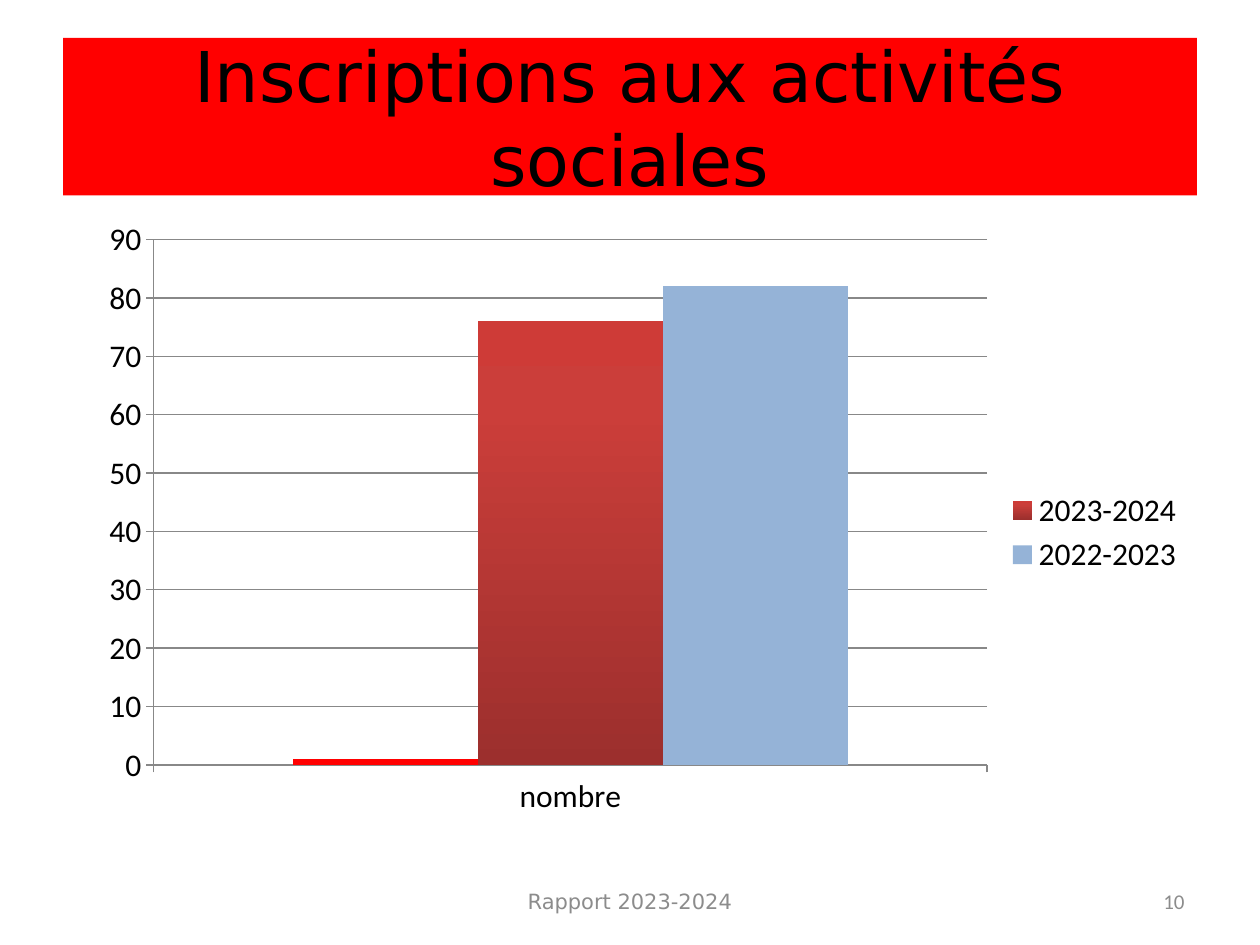
from lxml.etree import SubElement
from pptx import Presentation
from pptx.chart.data import CategoryChartData
from pptx.dml.color import RGBColor
from pptx.enum.chart import XL_CHART_TYPE, XL_LEGEND_POSITION, XL_TICK_MARK
from pptx.enum.text import MSO_ANCHOR, MSO_AUTO_SIZE, PP_ALIGN
from pptx.oxml import parse_xml
from pptx.oxml.ns import nsdecls, qn
from pptx.util import Pt

RED = RGBColor(0xFF, 0x00, 0x00)
BLUE = RGBColor(0x95, 0xB3, 0xD7)
BLACK = RGBColor(0x00, 0x00, 0x00)
GREY = RGBColor(0x88, 0x88, 0x88)
FOOTER_GREY = RGBColor(0x8C, 0x8C, 0x8C)
BRICK_STOPS = [
    (0, RGBColor(0x9C, 0x2F, 0x2D)),
    (80, RGBColor(0xCB, 0x3E, 0x3A)),
    (100, RGBColor(0xCE, 0x3B, 0x37)),
]
SERIES = [
    ("Series 1", 1, RED),
    ("2023-2024", 76, BRICK_STOPS),
    ("2022-2023", 82, BLUE),
]


class SlideBuilder:
    """Holds the style and the current slide; lengths are in points."""

    body_font = "Calibri"
    title_font = "DejaVu Sans"

    def __init__(self, prs):
        self.s = prs.slides.add_slide(prs.slide_layouts[5])

    def style_font(self, font, name, size, color):
        font.name, font.size, font.color.rgb = name, Pt(size), color

    def fill_text(self, sp, text, font_name, size, color, align):
        tf = sp.text_frame
        tf.text = text
        tf.word_wrap = True
        tf.auto_size = MSO_AUTO_SIZE.NONE
        tf.vertical_anchor = MSO_ANCHOR.MIDDLE
        p = tf.paragraphs[0]
        p.alignment = align
        self.style_font(p.font, font_name, size, color)

    def title(self, text, x, y, w, h):
        sp = self.s.shapes.title
        sp.left, sp.top, sp.width, sp.height = Pt(x), Pt(y), Pt(w), Pt(h)
        sp.fill.solid()
        sp.fill.fore_color.rgb = RED
        self.fill_text(sp, text, self.title_font, 40, BLACK, PP_ALIGN.CENTER)

    def footer(self, text, x, w, font_name, align):
        sp = self.s.shapes.add_textbox(Pt(x), Pt(500.4), Pt(w), Pt(28.8))
        self.fill_text(sp, text, font_name, 12, FOOTER_GREY, align)

    def column_chart(self, category, series, x, y, w, h):
        data = CategoryChartData()
        data.categories = [category]
        for name, value, _ in series:
            data.add_series(name, [value])
        chart = self.s.shapes.add_chart(
            XL_CHART_TYPE.COLUMN_CLUSTERED, Pt(x), Pt(y), Pt(w), Pt(h), data
        ).chart
        chart.has_title = False
        self.style_font(chart.font, self.body_font, 18, BLACK)

        plot = chart.plots[0]
        plot.gap_width, plot.overlap = 150, 0
        plot.vary_by_categories = False
        for ser, (_, _, color) in zip(plot.series, series):
            self.fill_series(ser.format.fill, color)

        for axis in (chart.category_axis, chart.value_axis):
            axis.major_tick_mark = XL_TICK_MARK.OUTSIDE
            axis.minor_tick_mark = XL_TICK_MARK.NONE
            self.style_line(axis.format.line)
            self.style_font(axis.tick_labels.font, self.body_font, 18, BLACK)
        value_axis = chart.value_axis
        value_axis.minimum_scale, value_axis.maximum_scale = 0, 90
        value_axis.major_unit = 10
        value_axis.has_major_gridlines = True
        self.style_line(value_axis.major_gridlines.format.line)

        chart.has_legend = True
        chart.legend.position = XL_LEGEND_POSITION.RIGHT
        chart.legend.include_in_layout = False
        self.style_font(chart.legend.font, self.body_font, 18, BLACK)
        return chart

    def style_line(self, line):
        line.color.rgb, line.width = GREY, Pt(0.75)

    def fill_series(self, fill, color):
        """Fill with one colour, or with (percent, colour) stops from bottom to top."""
        if isinstance(color, RGBColor):
            fill.solid()
            fill.fore_color.rgb = color
            return
        fill.gradient()
        fill.gradient_angle = 90
        stops = fill.gradient_stops
        gs_list = stops[0]._gs.getparent()
        gs_list.clear()
        for percent, rgb in color:
            gs = SubElement(gs_list, qn("a:gs"), pos=str(percent * 1000))
            SubElement(gs, qn("a:srgbClr"), val=str(rgb))

    def place_plot(self, chart, x, y, w, h):
        """Place the inner plot area, in fractions of the chart."""
        area = chart.element.xpath("c:chart/c:plotArea")[0]
        for old in area.findall(qn("c:layout")):
            area.remove(old)
        values = [("layoutTarget", "inner"), ("xMode", "edge"), ("yMode", "edge"),
                  ("x", x), ("y", y), ("w", w), ("h", h)]
        items = "".join(f'<c:{tag} val="{val}"/>' for tag, val in values)
        area.insert(0, parse_xml(
            f'<c:layout {nsdecls("c")}><c:manualLayout>{items}</c:manualLayout></c:layout>'))

    def hide_legend_entry(self, chart, index):
        position = chart.element.xpath("c:chart/c:legend/c:legendPos")[0]
        position.addnext(parse_xml(
            f'<c:legendEntry {nsdecls("c")}><c:idx val="{index}"/>'
            '<c:delete val="1"/></c:legendEntry>'))


def main():
    prs = Presentation()
    prs.slide_width, prs.slide_height = Pt(720), Pt(540)
    slide = SlideBuilder(prs)
    slide.title("Inscriptions aux activités sociales", 36, 21.6, 648, 90)
    chart = slide.column_chart("nombre", SERIES, 36, 126, 648, 356.4)
    slide.place_plot(chart, 0.08, 0.03, 0.735, 0.843)
    slide.hide_legend_entry(chart, 0)
    slide.footer("Rapport 2023-2024", 246, 228, slide.title_font, PP_ALIGN.CENTER)
    slide.footer("10", 516, 168, slide.body_font, PP_ALIGN.RIGHT)
    prs.save("out.pptx")


if __name__ == "__main__":
    main()
